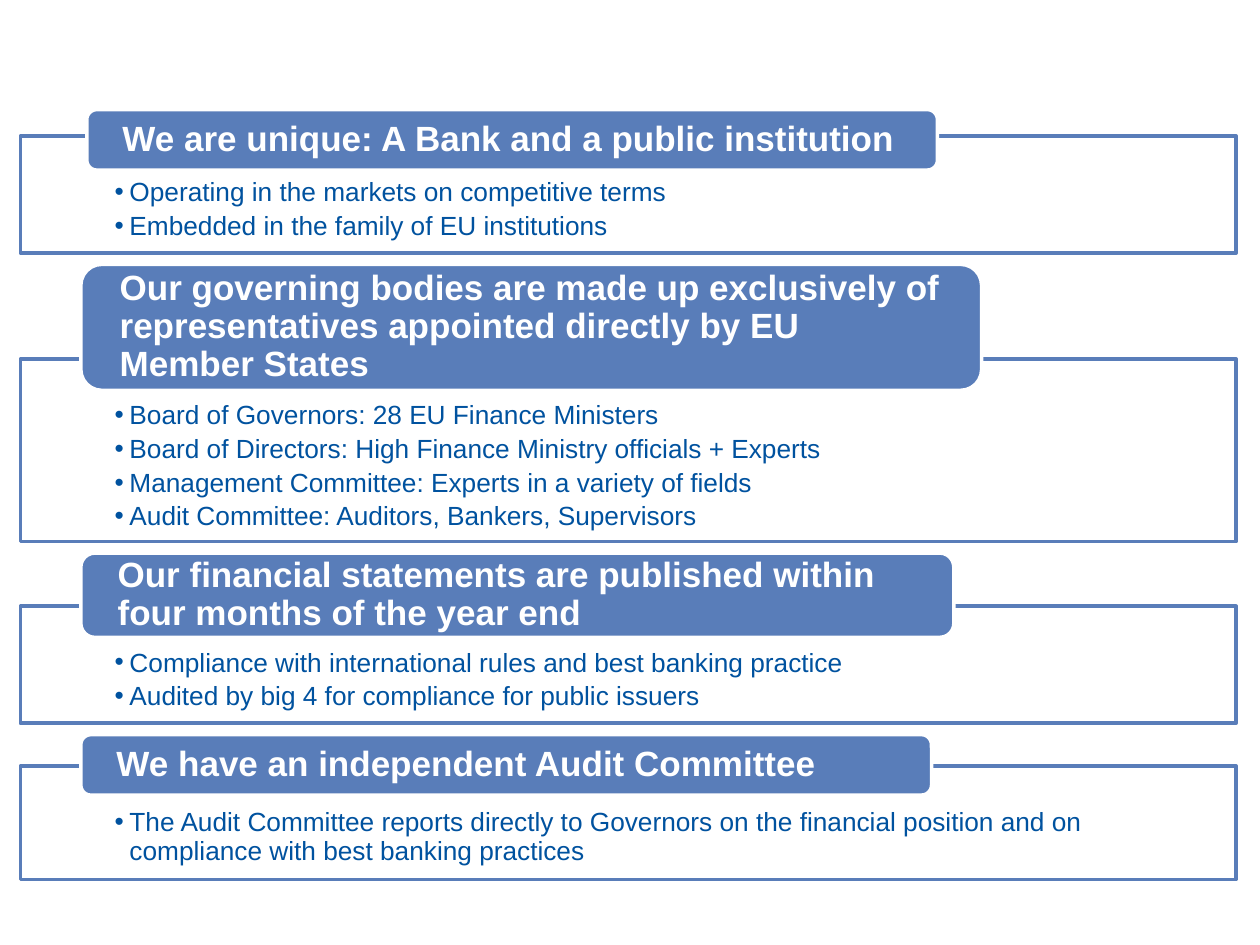
"""Build a slide of four headed panels describing how the bank is governed."""
from dataclasses import dataclass

import lxml.etree
import pptx
import pptx.dml.color
import pptx.enum.shapes
import pptx.enum.text
import pptx.oxml.ns
import pptx.util

Cm = pptx.util.Cm
Pt = pptx.util.Pt
BLUE = "597DB9"
NAVY = "00529F"
WHITE = "FFFFFF"
FRAME_LEFT = 0.41
FRAME_WIDTH = 24.51


@dataclass
class Panel:
    heading: str
    items: list[str]
    frame_top: float
    frame_height: float
    header_left: float
    header_top: float
    header_width: float
    header_height: float


PANELS = [
    Panel("We are unique: A Bank and a public institution",
          ["Operating in the markets on competitive terms",
           "Embedded in the family of EU institutions"],
          2.74, 2.36, 1.75, 2.21, 17.15, 1.22),
    Panel("Our governing bodies are made up exclusively of representatives "
          "appointed directly by EU Member States",
          ["Board of Governors: 28 EU Finance Ministers",
           "Board of Directors: High Finance Ministry officials + Experts",
           "Management Committee: Experts in a variety of fields",
           "Audit Committee: Auditors, Bankers, Supervisors"],
          7.24, 3.68, 1.63, 5.33, 18.16, 2.54),
    Panel("Our financial statements are published within four months of the year end",
          ["Compliance with international rules and best banking practice",
           "Audited by big 4 for compliance for public issuers"],
          12.22, 2.36, 1.63, 11.15, 17.6, 1.7),
    Panel("We have an independent Audit Committee",
          ["The Audit Committee reports directly to Governors on the financial "
           "position and on compliance with best banking practices"],
          15.44, 2.29, 1.63, 14.81, 17.15, 1.22),
]


def color(value: str) -> pptx.dml.color.RGBColor:
    return pptx.dml.color.RGBColor.from_string(value)


def paint(shape, fill: str, line: str) -> None:
    shape.fill.solid()
    shape.fill.fore_color.rgb = color(fill)
    shape.line.color.rgb = color(line)
    shape.line.width = Pt(2)


def set_frame(frame, anchor, side: float, top: float, bottom: float) -> None:
    frame.word_wrap = True
    frame.auto_size = pptx.enum.text.MSO_AUTO_SIZE.NONE
    frame.vertical_anchor = anchor
    frame.margin_left = frame.margin_right = Cm(side)
    frame.margin_top, frame.margin_bottom = Cm(top), Cm(bottom)


def add_bullet(paragraph) -> None:
    properties = paragraph._p.get_or_add_pPr()
    properties.set("marL", str(Cm(0.3)))
    properties.set("indent", str(-Cm(0.3)))
    for tag, key, value in (("a:buFont", "typeface", "Arial"), ("a:buChar", "char", "•")):
        lxml.etree.SubElement(properties, pptx.oxml.ns.qn(tag)).set(key, value)


def format_paragraph(paragraph, size: int, hue: str, bold: bool, after: float) -> None:
    paragraph.alignment = pptx.enum.text.PP_ALIGN.LEFT
    paragraph.line_spacing = 0.9
    paragraph.space_before = Pt(0)
    paragraph.space_after = Pt(after)
    for span in paragraph.runs:
        span.font.name = "Arial"
        span.font.size = Pt(size)
        span.font.bold = bold
        span.font.color.rgb = color(hue)


def fill_list(body, panel: Panel) -> None:
    body.left, body.top = Cm(FRAME_LEFT), Cm(panel.frame_top)
    body.width, body.height = Cm(FRAME_WIDTH), Cm(panel.frame_height)
    paint(body, WHITE, BLUE)
    set_frame(body.text_frame, pptx.enum.text.MSO_ANCHOR.TOP, 1.9, 0.87, 0.3)
    body.text_frame.text = "\n".join(panel.items)
    for paragraph in body.text_frame.paragraphs:
        add_bullet(paragraph)
        format_paragraph(paragraph, 15, NAVY, False, 3)


def add_header(page, panel: Panel) -> None:
    box = page.shapes.add_shape(
        pptx.enum.shapes.MSO_SHAPE.ROUNDED_RECTANGLE,
        Cm(panel.header_left), Cm(panel.header_top),
        Cm(panel.header_width), Cm(panel.header_height))
    box.shadow.inherit = False
    paint(box, BLUE, WHITE)
    set_frame(box.text_frame, pptx.enum.text.MSO_ANCHOR.MIDDLE, 0.66, 0, 0)
    box.text_frame.text = panel.heading
    format_paragraph(box.text_frame.paragraphs[0], 20, WHITE, True, 0)


def main() -> None:
    deck = pptx.Presentation()
    deck.slide_width, deck.slide_height = Cm(25.4), Cm(19.05)
    page = deck.slides.add_slide(deck.slide_layouts.get_by_name("Comparison"))
    title = page.shapes.title
    title.element.getparent().remove(title.element)
    for body, panel in zip(list(page.placeholders), PANELS):
        fill_list(body, panel)
        add_header(page, panel)
    deck.save("out.pptx")


if __name__ == "__main__":
    main()
